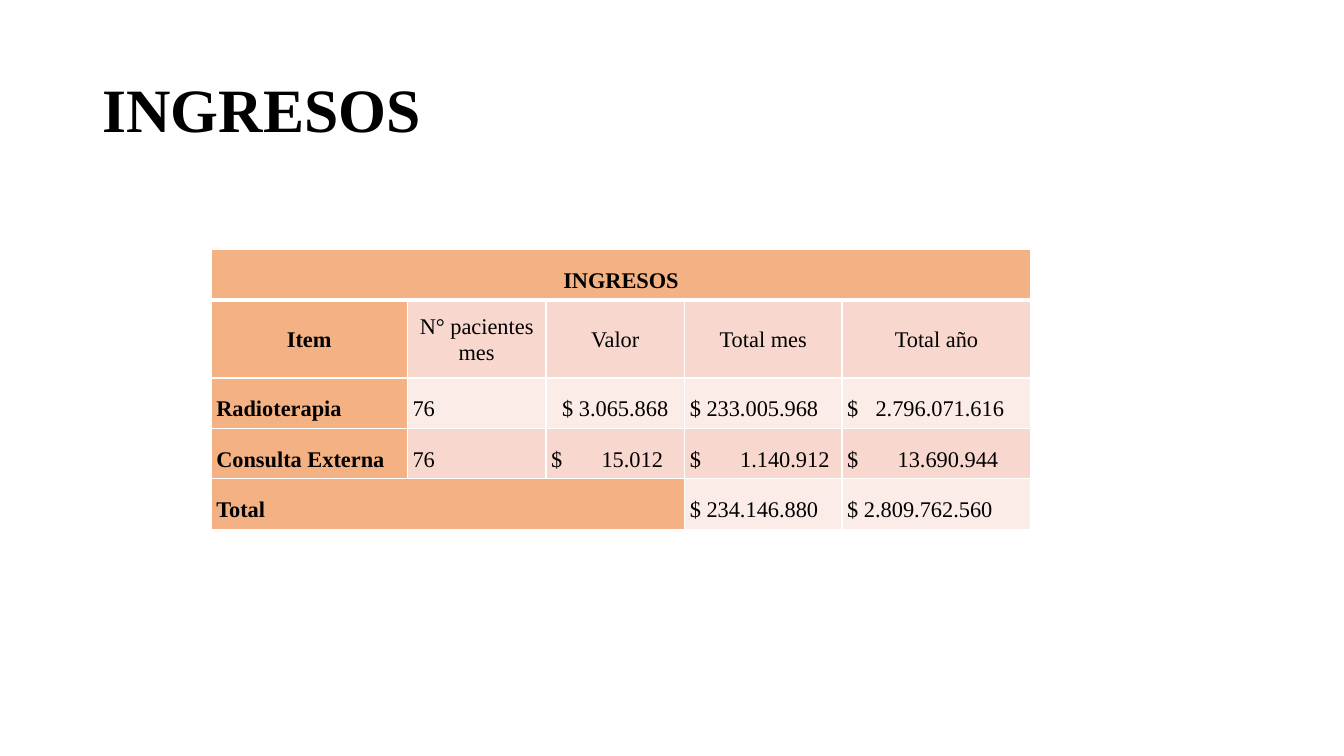
from lxml import etree
from pptx import Presentation, util as u
from pptx.dml.color import RGBColor
from pptx.enum import text
from pptx.oxml.ns import qn

PX = 9525  # EMU per px, slide of 1280 x 720
FONT = "Times New Roman"
ORANGE, PINK, PALE = "F4B183", "F8D7CE", "FCECE8"
COLUMNS = [187, 132, 132, 150, 180]
ROWS = [48, 74, 48, 48, 48]
FILLS = [ORANGE, PINK, PALE, PINK, PALE]
INCOME = [
    ["INGRESOS", "", "", "", ""],
    ["Item", "N° pacientes mes", "Valor", "Total mes", "Total año"],
    ["Radioterapia", "76", "$ 3.065.868", "$ 233.005.968", "$\t2.796.071.616"],
    ["Consulta Externa", "76", "$\t15.012", "$\t1.140.912", "$\t13.690.944"],
    ["Total", "", "", "$ 234.146.880", "$ 2.809.762.560"],
]
LABEL_SPANS = {0: 5, 4: 3}  # row: columns taken by its label
TAB_STOPS = {2: 27, 3: 48}  # row: where amounts start after the $ sign


def px(n):
    return u.Emu(n * PX)


def color(value):
    return RGBColor.from_string(value)


def style(p, size, bold, spacing, align):
    p.alignment = align
    p.line_spacing = spacing
    for r in p.runs:
        r.font.name = FONT
        r.font.size = u.Pt(size)
        r.font.bold = bold
        r.font.color.rgb = color("000000")


def add_title(s, title):
    tf = s.shapes.add_textbox(px(88), px(38), px(1104), px(139)).text_frame
    tf.word_wrap = True
    tf.vertical_anchor = text.MSO_ANCHOR.MIDDLE
    tf.text = title
    style(tf.paragraphs[0], 44, True, 0.9, text.PP_ALIGN.LEFT)


def add_borders(cell, top, bottom):
    tcPr = cell._tc.get_or_add_tcPr()
    for side, width in (("L", 1), ("R", 1), ("T", top), ("B", bottom)):
        ln = etree.SubElement(tcPr, qn(f"a:ln{side}"), w=str(u.Pt(width)))
        fill = etree.SubElement(ln, qn("a:solidFill"))
        etree.SubElement(fill, qn("a:srgbClr"), val="FFFFFF")


def add_tab(p, position):
    tabs = etree.SubElement(p._p.get_or_add_pPr(), qn("a:tabLst"))
    etree.SubElement(tabs, qn("a:tab"), pos=str(px(position)), algn="l")


def fill_cell(cell, row, col, value):
    # Box: white rules, thicker under the heading
    add_borders(cell, 3 if row == 1 else 1, 3 if row == 0 else 1)
    is_label = col < LABEL_SPANS.get(row, 1)
    cell.fill.solid()
    cell.fill.fore_color.rgb = color(ORANGE if is_label else FILLS[row])
    cell.margin_left = cell.margin_right = px(5)
    cell.margin_top = cell.margin_bottom = 0
    cell.vertical_anchor = text.MSO_ANCHOR.MIDDLE
    if not value:
        return

    # Text: headings and the first price are centred
    cell.text_frame.text = value
    p = cell.text_frame.paragraphs[0]
    centred = row < 2 or (row, col) == (2, 2)
    align = text.PP_ALIGN.CENTER if centred else text.PP_ALIGN.JUSTIFY
    style(p, 16, is_label, 1.07 if row == 1 else 1.5, align)
    if "\t" in value:
        add_tab(p, TAB_STOPS[row])


def add_income_table(s):
    frame = s.shapes.add_table(len(ROWS), len(COLUMNS), px(201), px(238),
                               px(sum(COLUMNS)), px(sum(ROWS)))
    table = frame.table
    for column, width in zip(table.columns, COLUMNS):
        column.width = px(width)
    for row, height in zip(table.rows, ROWS):
        row.height = px(height)
    for row, span in LABEL_SPANS.items():
        table.cell(row, 0).merge(table.cell(row, span - 1))
    for row, values in enumerate(INCOME):
        for col, value in enumerate(values):
            fill_cell(table.cell(row, col), row, col, value)


def main():
    prs = Presentation()
    prs.slide_width, prs.slide_height = px(1280), px(720)
    s = prs.slides.add_slide(prs.slide_layouts[6])
    add_title(s, "INGRESOS")
    add_income_table(s)
    prs.save("out.pptx")


if __name__ == "__main__":
    main()
